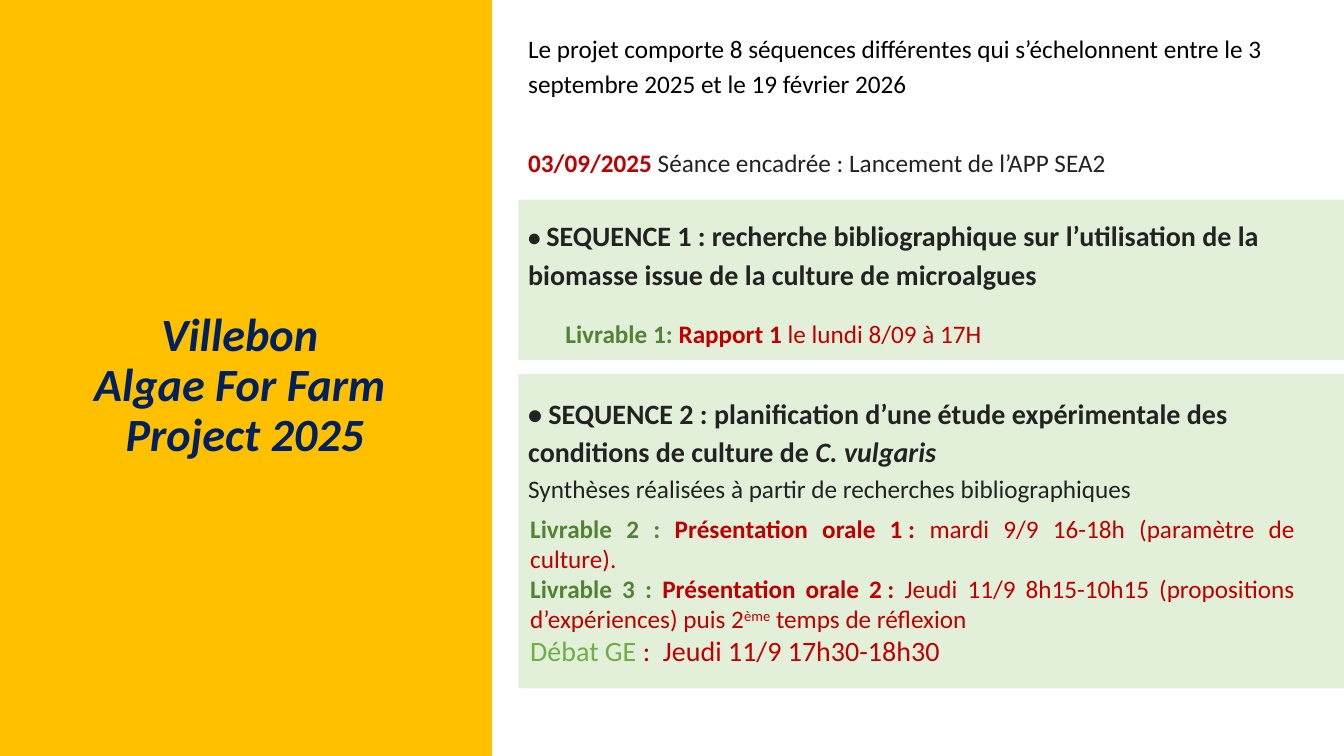
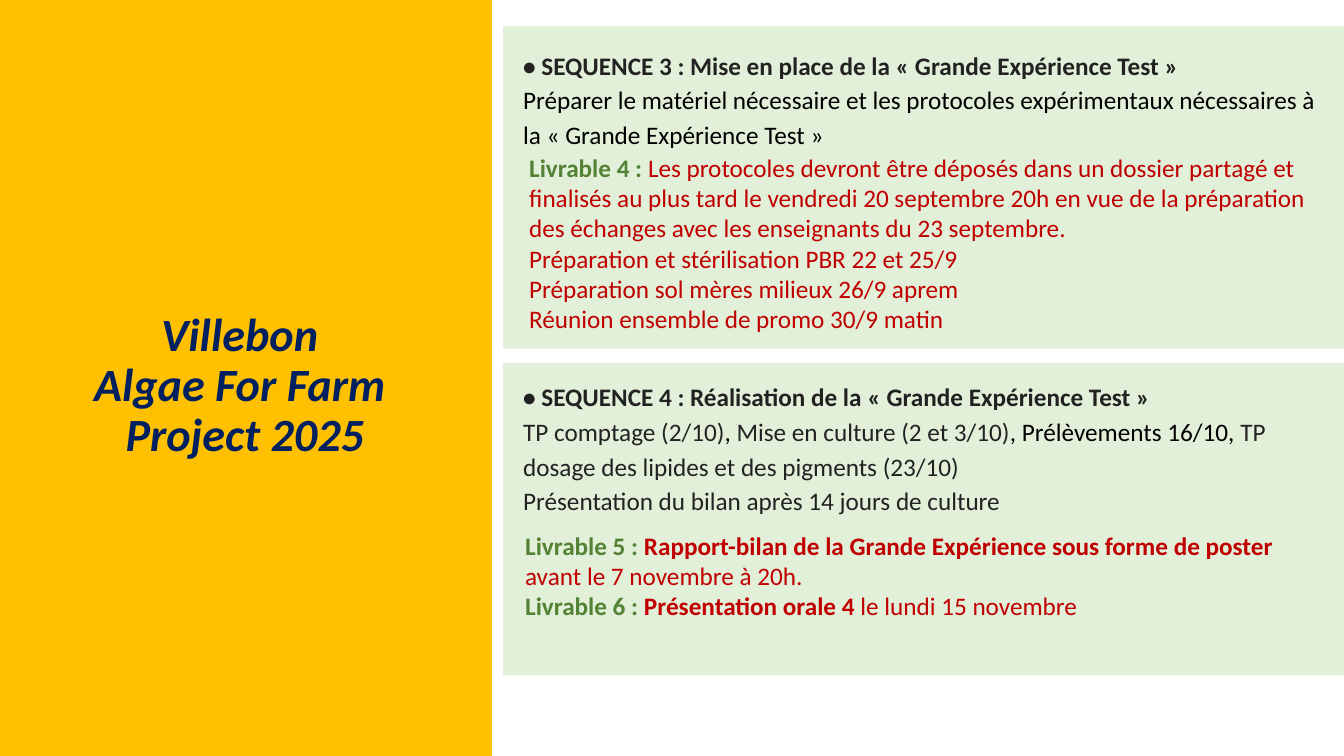
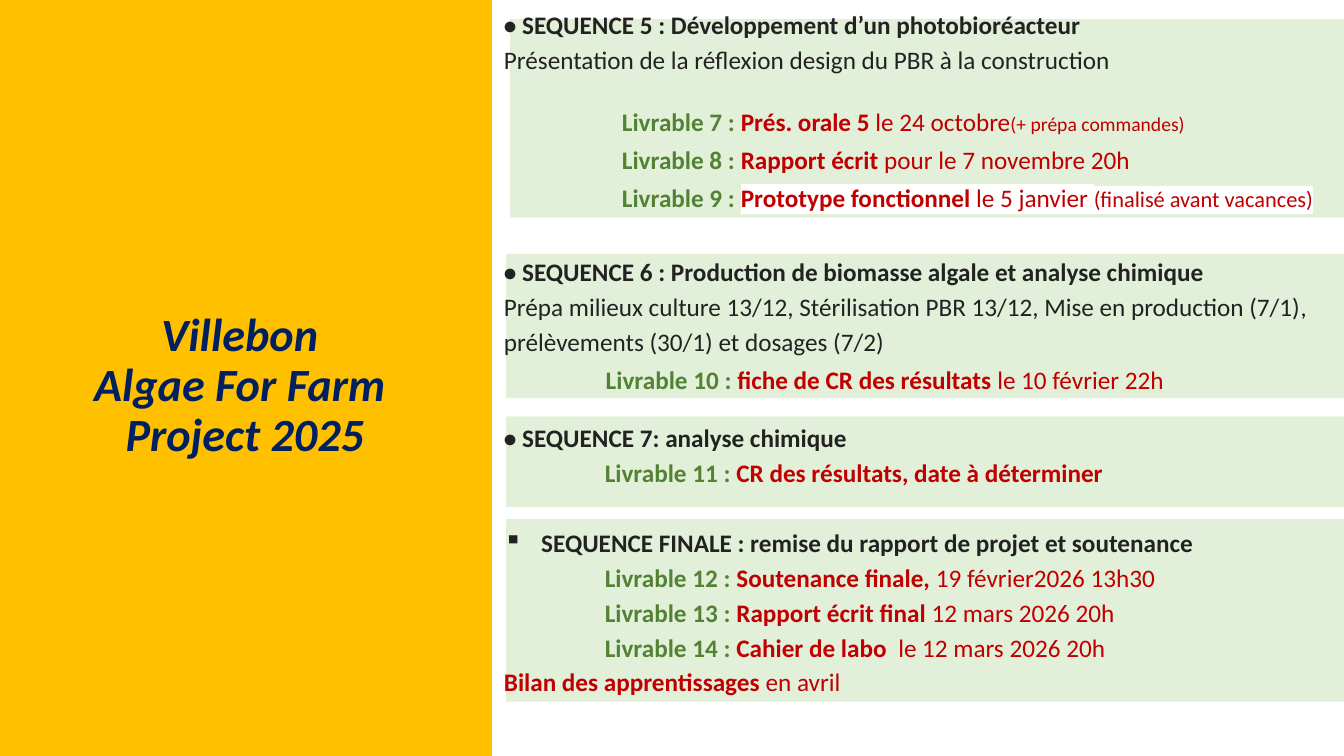
from dataclasses import dataclass, replace

from pptx import Presentation
from pptx.dml.color import RGBColor
from pptx.enum.shapes import MSO_SHAPE
from pptx.enum.text import MSO_ANCHOR, PP_ALIGN
from pptx.oxml.ns import qn
from pptx.oxml.xmlchemy import OxmlElement
from pptx.slide import Slide
from pptx.util import Inches, Pt

RECTANGLE = MSO_SHAPE.RECTANGLE
MIDDLE = MSO_ANCHOR.MIDDLE
CENTER = PP_ALIGN.CENTER
JUSTIFY = PP_ALIGN.JUSTIFY
LEFT = PP_ALIGN.LEFT


@dataclass(frozen=True)
class Theme:
    font: str = "Calibri"
    band: str = "FFC000"
    panel: str = "E2F0D9"
    title: str = "002060"
    ink: str = "222222"
    black: str = "000000"
    label: str = "548235"
    debate: str = "70AD47"
    deadline: str = "C00000"
    white: str = "FFFFFF"
    title_size: float = 33
    large: float = 20
    normal: float = 18
    small: float = 16
    tiny: float = 14
    loose: float = 1.15
    tight: float = 0.9


THEME = Theme()
SLIDE_WIDTH, SLIDE_HEIGHT = 13.33, 7.5
BAND_WIDTH = 4.88
TITLE_LINES = ("Villebon ", "Algae For Farm ", "Project 2025")


@dataclass(frozen=True)
class Span:
    text: str
    color: str = THEME.ink
    bold: bool = False
    size: float = THEME.normal
    italic: bool = False
    raised: bool = False
    highlight: str = ""


@dataclass(frozen=True)
class Line:
    spans: tuple[Span, ...]
    spacing: float = 1.0
    align: PP_ALIGN = LEFT
    before: float = 0
    after: float = 0
    margin: float = 0
    bullet: str = ""


@dataclass(frozen=True)
class Block:
    left: float
    top: float
    width: float
    height: float
    lines: tuple[Line, ...]


@dataclass(frozen=True)
class Panel:
    left: float
    top: float
    height: float


@dataclass(frozen=True)
class Page:
    panels: tuple[Panel, ...]
    blocks: tuple[Block, ...]


def heading(text: str, size: float = THEME.normal, italic: bool = False) -> Span:
    return Span(text, bold=True, size=size, italic=italic)


def label(number: str) -> Span:
    return Span(f"Livrable {number}", THEME.label, True)


def strong(text: str) -> Span:
    return Span(text, THEME.deadline, True)


def plain(text: str, size: float = THEME.normal) -> Span:
    return Span(text, THEME.deadline, size=size)


def marked(span: Span) -> Span:
    return replace(span, highlight=THEME.white)


def loose(*spans: Span, margin: float = 0, bullet: str = "", after: float = 0) -> Line:
    return Line(spans, THEME.loose, margin=margin, bullet=bullet, after=after)


def single(*spans: Span, align: PP_ALIGN = LEFT, before: float = 0) -> Line:
    return Line(spans, align=align, before=before)


PAGES = (
    Page(
        (Panel(5.14, 1.98, 1.59), Panel(5.14, 3.71, 3.12)),
        (
            Block(5.14, 0.24, 8.19, 0.8, (
                loose(Span("Le projet comporte 8 séquences différentes qui s’échelonnent "
                           "entre le 3 septembre 2025 et le 19 février 2026", THEME.black), after=10),
            )),
            Block(5.14, 1.37, 8.19, 0.45, (
                loose(strong("03/09/2025 "), Span("Séance encadrée : Lancement de l’APP SEA2")),
            )),
            Block(5.14, 2.07, 8.19, 0.88, (
                loose(heading("• "),
                      heading("SEQUENCE 1 : recherche bibliographique sur l’utilisation de la "
                              "biomasse issue de la culture de microalgues", THEME.large)),
            )),
            Block(5.51, 3.11, 4.5, 0.4, (
                single(label("1: "), strong("Rapport 1 "), plain("le lundi 8/09 à 17H")),
            )),
            Block(5.14, 3.83, 8.19, 1.23, (
                loose(heading("• SEQUENCE 2 : planification d’une étude expérimentale des "
                              "conditions de culture de ", THEME.large),
                      heading("C. vulgaris", THEME.large, True)),
                loose(Span("Synthèses réalisées à partir de recherches bibliographiques")),
            )),
            Block(5.16, 5.04, 7.78, 1.65, (
                single(label("2 : "), strong("Présentation orale 1\u00a0:"),
                       plain(" mardi 9/9 16-18h (paramètre de culture)."), align=JUSTIFY),
                single(label("3 : "), strong("Présentation orale 2\u00a0:"),
                       plain(" Jeudi 11/9 8h15-10h15 (propositions d’expériences) puis 2"),
                       replace(plain("ème"), raised=True),
                       plain(" temps de réflexion"), align=JUSTIFY),
                single(Span("Débat GE ", THEME.debate, size=THEME.large),
                       plain(":  Jeudi 11/9 17h30-18h30", THEME.large), align=JUSTIFY),
            )),
        ),
    ),
    Page(
        (Panel(4.99, 0.26, 3.2), Panel(4.99, 3.6, 3.1)),
        (
            Block(5.09, 0.4, 8.09, 1.15, (
                loose(heading("• SEQUENCE 3 : Mise en place de la «\u00a0Grande Expérience Test\u00a0»")),
                loose(Span("Préparer le matériel nécessaire et les protocoles expérimentaux "
                           "nécessaires à la «\u00a0Grande Expérience Test\u00a0»", THEME.black)),
            )),
            Block(5.15, 1.46, 7.91, 1.92, (
                single(label("4 : "),
                       plain("Les protocoles devront être déposés dans un dossier partagé et "
                             "finalisés au plus tard le vendredi 20 septembre 20h en vue de la "
                             "préparation des échanges avec les enseignants du 23 septembre.")),
                single(plain("Préparation et stérilisation PBR 22 et 25/9")),
                single(plain("Préparation sol mères milieux 26/9 aprem")),
                single(plain("Réunion ensemble de promo 30/9 matin")),
            )),
            Block(5.09, 3.69, 8.09, 1.5, (
                loose(heading("• SEQUENCE 4 : Réalisation de la « Grande Expérience Test »")),
                loose(Span("TP comptage (2/10)"), Span(", ", THEME.black),
                      Span("Mise en culture (2 et 3/10)"),
                      Span(", Prélèvements 16/10, ", THEME.black),
                      Span("TP dosage des lipides et des pigments (23/10)")),
                loose(Span("Présentation du bilan après 14 jours de culture")),
            )),
            Block(5.11, 5.21, 8.22, 1.31, (
                single(label("5 : "),
                       strong("Rapport-bilan de la Grande Expérience sous forme de poster "),
                       plain("avant le 7 novembre à 20h.")),
                single(label("6 : "), strong("Présentation orale 4 "), plain("le lundi 15 novembre")),
            )),
        ),
    ),
    Page(
        (Panel(5.06, 0.19, 1.97), Panel(5.02, 2.52, 1.43),
         Panel(5.02, 4.13, 0.9), Panel(5.02, 5.15, 1.81)),
        (
            Block(4.9, 0, 8.54, 0.8, (
                loose(heading("• SEQUENCE 5 : Développement d’un photobioréacteur")),
                loose(Span("Présentation de la réflexion design du PBR à la construction")),
            )),
            Block(6.07, 1.01, 7.2, 1.16, (
                single(label("7 : "), strong("Prés. orale 5 "), plain("le 24 octobre"),
                       plain("(+ prépa commandes)", THEME.tiny)),
                single(label("8 : "), strong("Rapport écrit "),
                       plain("pour le 7 novembre 20h"), before=5.4),
                single(label("9 : "), marked(strong("Prototype fonctionnel ")),
                       marked(plain("le 5 janvier ")),
                       marked(plain("(finalisé avant vacances)", THEME.small)), before=5.4),
            )),
            Block(4.9, 2.45, 8.54, 1.15, (
                loose(heading("• SEQUENCE 6 : Production de biomasse algale et analyse chimique")),
                loose(Span("Prépa milieux culture 13/12, Stérilisation PBR 13/12, "
                           "Mise en production (7/1)"),
                      Span(", ", THEME.black, size=THEME.small),
                      Span("prélèvements (30/1) et dosages (7/2)")),
            )),
            Block(5.91, 3.57, 6, 0.4, (
                single(label("10 : "), strong("fiche de CR des résultats "),
                       plain("le 10 février 22h")),
            )),
            Block(4.9, 4.1, 8.54, 0.8, (
                loose(heading("• SEQUENCE 7: analyse chimique")),
                loose(label("11 : "), strong("CR des résultats, date à déterminer"), margin=1),
            )),
            Block(4.9, 5.14, 8.54, 1.86, (
                loose(heading("SEQUENCE FINALE : remise du rapport de projet et soutenance"),
                      margin=0.37, bullet="▪"),
                loose(label("12 : "), strong("Soutenance finale, "),
                      plain("19 février2026 13h30"), margin=1),
                loose(label("13 : "), strong("Rapport écrit final"),
                      plain(" 12 mars 2026 20h"), margin=1),
                loose(label("14 : "), strong("Cahier de labo  "),
                      plain("le 12 mars 2026 20h"), margin=1),
                loose(strong("Bilan des apprentissages "), plain("en avril")),
            )),
        ),
    ),
)


def add_rectangle(slide: Slide, left: float, top: float, width: float, height: float, color: str):
    shape = slide.shapes.add_shape(
        RECTANGLE, Inches(left), Inches(top), Inches(width), Inches(height))
    shape.shadow.inherit = False
    shape.fill.solid()
    shape.fill.fore_color.rgb = RGBColor.from_string(color)
    shape.line.fill.background()
    return shape


def add_text_frame(slide: Slide, left: float, top: float, width: float, height: float):
    box = slide.shapes.add_textbox(Inches(left), Inches(top), Inches(width), Inches(height))
    box.text_frame.word_wrap = True
    return box.text_frame


def add_span(paragraph, span: Span) -> None:
    run = paragraph.add_run()
    run.text = span.text
    font = run.font
    font.name = THEME.font
    font.size = Pt(span.size)
    font.bold = span.bold
    font.italic = span.italic
    font.color.rgb = RGBColor.from_string(span.color)
    properties = run._r.get_or_add_rPr()
    if span.raised:
        properties.set("baseline", "30000")
    if span.highlight:
        highlight = OxmlElement("a:highlight")
        color = OxmlElement("a:srgbClr")
        color.set("val", span.highlight)
        highlight.append(color)
        properties.find(qn("a:latin")).addprevious(highlight)


def fill_paragraph(paragraph, line: Line) -> None:
    paragraph.alignment = line.align
    paragraph.line_spacing = line.spacing
    paragraph.space_before = Pt(line.before)
    paragraph.space_after = Pt(line.after)
    properties = paragraph._p.get_or_add_pPr()
    if line.margin:
        properties.set("marL", str(Inches(line.margin)))
    if line.bullet:
        properties.set("indent", str(-Inches(line.margin)))
        bullet = OxmlElement("a:buChar")
        bullet.set("char", line.bullet)
        properties.append(bullet)
    for span in line.spans:
        add_span(paragraph, span)


def add_block(slide: Slide, block: Block) -> None:
    frame = add_text_frame(slide, block.left, block.top, block.width, block.height)
    for index, line in enumerate(block.lines):
        paragraph = frame.add_paragraph() if index else frame.paragraphs[0]
        fill_paragraph(paragraph, line)


def add_title(slide: Slide) -> None:
    frame = add_text_frame(slide, 0.31, 0.76, 4.24, 6.15)
    frame.vertical_anchor = MIDDLE
    paragraph = frame.paragraphs[0]
    paragraph.alignment = CENTER
    paragraph.line_spacing = THEME.tight
    for index, text in enumerate(TITLE_LINES):
        if index:
            paragraph.add_line_break()
        add_span(paragraph, Span(text, THEME.title, True, THEME.title_size, True))


def add_page(presentation, layout, page: Page) -> Slide:
    slide = presentation.slides.add_slide(layout)
    for panel in page.panels:
        add_rectangle(slide, panel.left, panel.top,
                      SLIDE_WIDTH - panel.left, panel.height, THEME.panel)
    for block in page.blocks:
        add_block(slide, block)
    add_title(slide)
    return slide


def main() -> None:
    presentation = Presentation()
    presentation.slide_width = Inches(SLIDE_WIDTH)
    presentation.slide_height = Inches(SLIDE_HEIGHT)
    layout = presentation.slide_layouts[6]
    slides = [add_page(presentation, layout, page) for page in PAGES]
    band = add_rectangle(slides[0], 0, 0, BAND_WIDTH, SLIDE_HEIGHT, THEME.band)
    layout.shapes.element.append(band.element)
    presentation.save("out.pptx")


if __name__ == "__main__":
    main()
